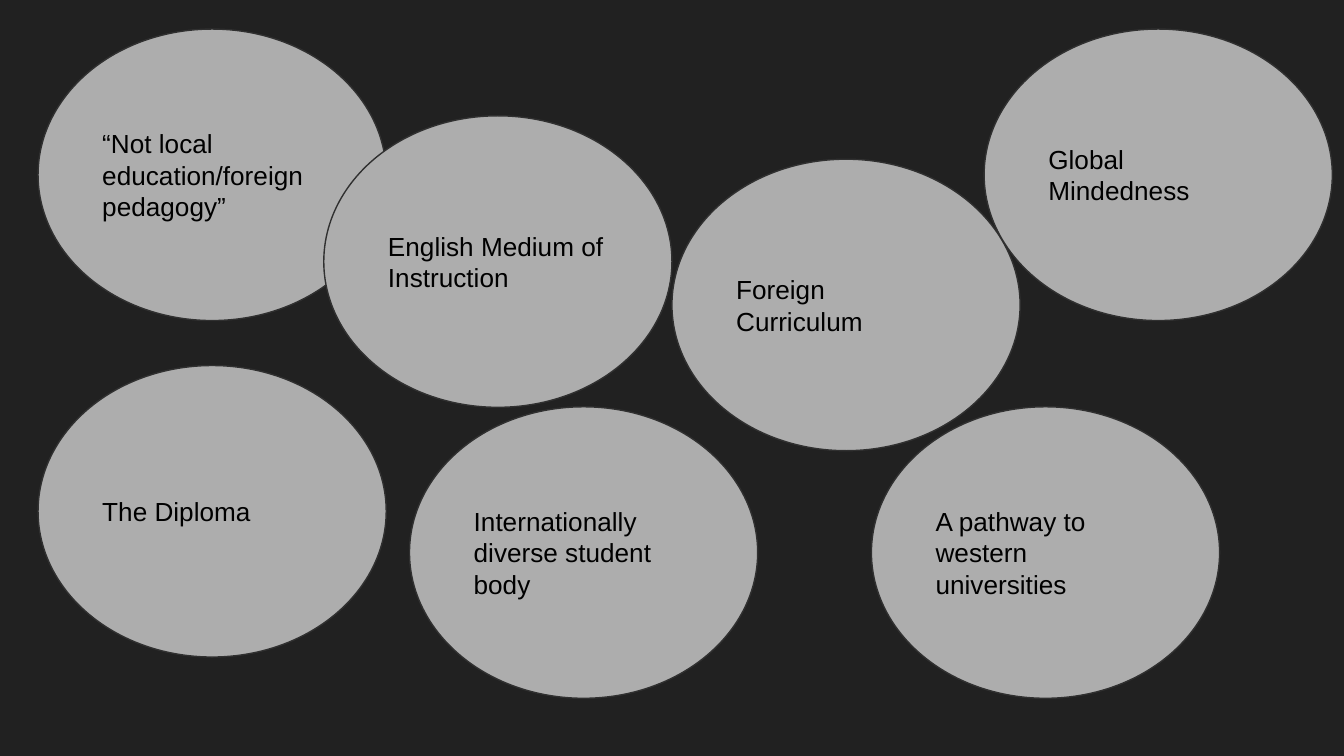
from pptx import Presentation
from pptx.dml.color import RGBColor as Rgb
from pptx.enum.shapes import MSO_SHAPE as Kind
from pptx.enum.text import MSO_ANCHOR as Anchor, PP_ALIGN as Align
from pptx.util import Cm, Pt

hues = {"back": "212121", "fill": "ADADAD", "line": "303030", "text": "000000"}
tint = {name: Rgb.from_string(code) for name, code in hues.items()}

wide, high = Cm(6.58), Cm(5.51)
inset = Cm(0.25)
frame = {
    "word_wrap": True,
    "vertical_anchor": Anchor.MIDDLE,
    "margin_left": inset,
    "margin_right": inset,
    "margin_top": inset,
    "margin_bottom": inset,
}
face = {"name": "Arial", "size": Pt(14)}

ideas = [
    (0.72, 0.55, "“Not local education/foreign pedagogy”"),
    (0.72, 6.91, "The Diploma"),
    (7.74, 7.69, "Internationally diverse student body"),
    (16.47, 7.69, "A pathway to western universities"),
    (6.12, 2.19, "English Medium of Instruction"),
    (12.7, 3.01, "Foreign Curriculum"),
    (18.6, 0.55, "Global Mindedness"),
]

deck = Presentation()
deck.slide_width, deck.slide_height = Cm(25.4), Cm(14.29)
slide = deck.slides.add_slide(deck.slide_layouts[6])
slide.background.fill.solid()
slide.background.fill.fore_color.rgb = tint["back"]

for left, top, words in ideas:
    oval = slide.shapes.add_shape(Kind.OVAL, Cm(left), Cm(top), wide, high)
    oval.shadow.inherit = False
    oval.fill.solid()
    oval.fill.fore_color.rgb = tint["fill"]
    oval.line.color.rgb = tint["line"]
    oval.line.width = Pt(0.75)
    body = oval.text_frame
    for key, value in frame.items():
        setattr(body, key, value)
    para = body.paragraphs[0]
    para.alignment = Align.LEFT
    run = para.add_run()
    run.text = words
    for key, value in face.items():
        setattr(run.font, key, value)
    run.font.color.rgb = tint["text"]

deck.save("out.pptx")
